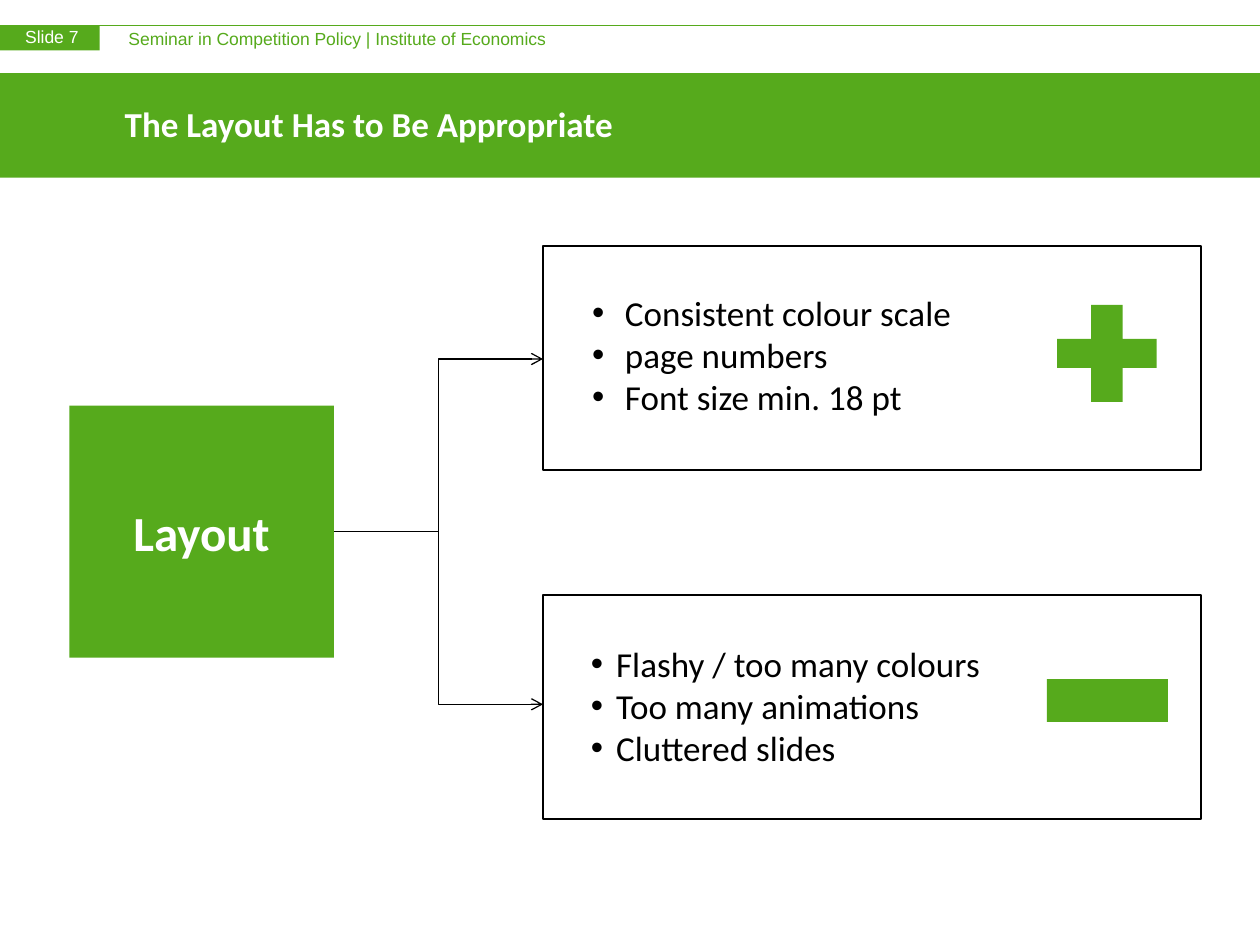
from dataclasses import dataclass

from lxml import etree
from pptx import Presentation
from pptx.dml import color
from pptx.enum import shapes, text
from pptx.oxml import ns
from pptx.util import Inches, Pt


@dataclass(frozen=True)
class Theme:
    green: color.RGBColor = color.RGBColor(0x56, 0xAA, 0x1C)
    black: color.RGBColor = color.RGBColor(0, 0, 0)
    white: color.RGBColor = color.RGBColor(255, 255, 255)
    header_font: str = "Arial"
    body_font: str = "Calibri"
    header_size: int = 10
    body_size: int = 20
    topic_size: int = 28
    thin: float = 0.75
    frame: float = 1


THEME = Theme()


def add_block(slide, left, top, width, height, fill=None, line=None,
              kind=shapes.MSO_SHAPE.RECTANGLE):
    block = slide.shapes.add_shape(
        kind, Inches(left), Inches(top), Inches(width), Inches(height))
    block.shadow.inherit = False
    if fill is None:
        block.fill.background()
    else:
        block.fill.solid()
        block.fill.fore_color.rgb = fill
    if line is None:
        block.line.fill.background()
    else:
        block.line.color.rgb = line
        block.line.width = Pt(THEME.frame)
    return block


def clear_margins(frame):
    frame.margin_left = frame.margin_right = 0
    frame.margin_top = frame.margin_bottom = 0
    frame.word_wrap = True


def add_label(slide, left, top, width, height):
    frame = slide.shapes.add_textbox(
        Inches(left), Inches(top), Inches(width), Inches(height)).text_frame
    clear_margins(frame)
    return frame


def write(paragraph, words, size, ink, font=THEME.body_font, bold=False):
    run = paragraph.add_run()
    run.text = words
    run.font.name = font
    run.font.size = Pt(size)
    run.font.bold = bold
    run.font.color.rgb = ink


def add_bullets(slide, left, top, indent, points):
    frame = add_label(slide, left, top, 4.61, 1.01)
    for index, point in enumerate(points):
        paragraph = frame.paragraphs[0] if index == 0 else frame.add_paragraph()
        properties = paragraph._p.get_or_add_pPr()
        properties.set("marL", str(Inches(indent)))
        properties.set("indent", str(-Inches(indent)))
        etree.SubElement(properties, ns.qn("a:buFont"), typeface="Arial")
        etree.SubElement(properties, ns.qn("a:buChar"), char="•")
        write(paragraph, point, THEME.body_size, THEME.black)


def add_line(slide, kind, start, end, ink, arrow=False):
    line = slide.shapes.add_connector(kind, *map(Inches, start + end))
    line.line.color.rgb = ink
    line.line.width = Pt(THEME.thin)
    if arrow:
        etree.SubElement(line.line._get_or_add_ln(), ns.qn("a:tailEnd"), type="arrow")
    etree.SubElement(line._element.spPr, ns.qn("a:effectLst"))


def add_header(slide):
    # Running header with slide number
    add_line(slide, shapes.MSO_CONNECTOR.STRAIGHT, (0, 0.2), (10, 0.2), THEME.green)
    add_block(slide, 0, 0.2, 0.79, 0.2, THEME.green)
    for left, top, width, words, ink in (
            (1.02, 0.22, 6.56, "Seminar in Competition Policy | Institute of Economics",
             THEME.green),
            (0.2, 0.21, 0.62, "Slide 7", THEME.white)):
        label = add_label(slide, left, top, width, 0.17)
        write(label.paragraphs[0], words, THEME.header_size, ink, THEME.header_font)

    # Title band
    add_block(slide, 0, 0.58, 10, 0.83, THEME.green)
    title = add_label(slide, 0.99, 0.62, 8.33, 0.72)
    title.vertical_anchor = text.MSO_ANCHOR.MIDDLE
    title.paragraphs[0].line_spacing = Pt(24)
    write(title.paragraphs[0], "The Layout Has to Be Appropriate",
          THEME.body_size, THEME.white, bold=True)


def add_topic(slide, words):
    topic = add_block(slide, 0.55, 3.22, 2.1, 2, THEME.green).text_frame
    clear_margins(topic)
    topic.vertical_anchor = text.MSO_ANCHOR.MIDDLE
    topic.paragraphs[0].alignment = text.PP_ALIGN.CENTER
    write(topic.paragraphs[0], words, THEME.topic_size, THEME.white, bold=True)


def add_branch(slide, top, end_y):
    add_block(slide, 4.31, top, 5.22, 1.78, line=THEME.black)
    add_line(slide, shapes.MSO_CONNECTOR.ELBOW, (2.65, 4.22), (4.31, end_y),
             THEME.black, arrow=True)


def main():
    deck = Presentation()
    deck.slide_width, deck.slide_height = Inches(10), Inches(7.5)
    slide = deck.slides.add_slide(deck.slide_layouts[6])
    add_header(slide)
    add_topic(slide, "Layout")

    # What to do
    add_branch(slide, 1.95, 2.85)
    plus = add_block(slide, 8.39, 2.42, 0.79, 0.77, THEME.green,
                     kind=shapes.MSO_SHAPE.CROSS)
    plus.adjustments[0] = 0.35
    add_bullets(slide, 4.7, 2.31, 0.26,
                ("Consistent colour scale", "page numbers", "Font size min. 18 pt"))

    # What to avoid
    add_branch(slide, 4.72, 5.59)
    add_block(slide, 8.31, 5.39, 0.96, 0.34, THEME.green)
    add_bullets(slide, 4.69, 5.1, 0.2,
                ("Flashy / too many colours", "Too many animations", "Cluttered slides"))

    deck.save("out.pptx")


if __name__ == "__main__":
    main()
